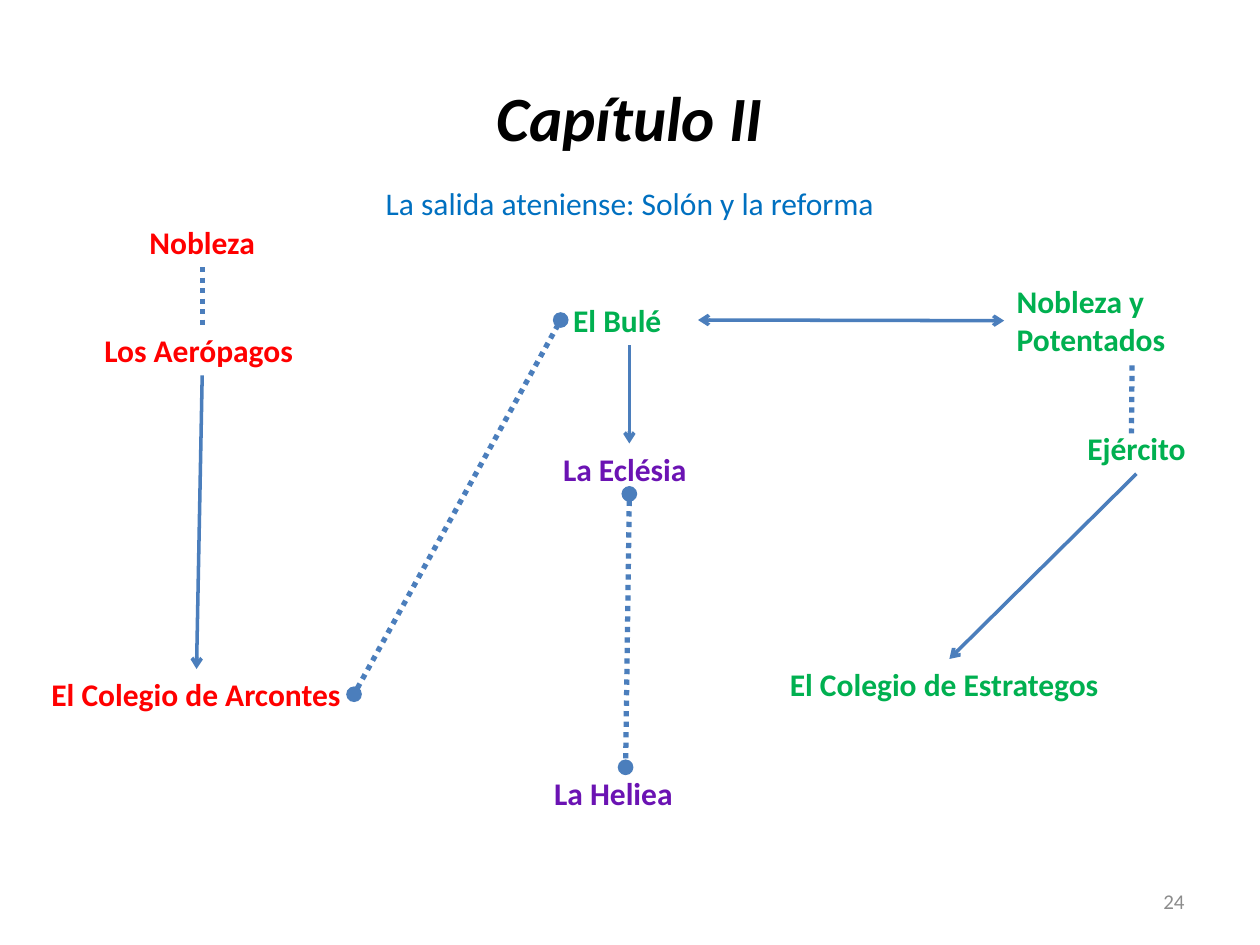
from lxml.etree import SubElement
from pptx import Presentation
from pptx.dml.color import RGBColor
from pptx.enum.dml import MSO_LINE
from pptx.enum.shapes import MSO_CONNECTOR
from pptx.enum.text import MSO_ANCHOR, PP_ALIGN
from pptx.oxml.ns import qn
from pptx.util import Inches, Pt

BLACK = RGBColor(0x00, 0x00, 0x00)
GRAY = RGBColor(0x8C, 0x8C, 0x8C)
BLUE = RGBColor(0x00, 0x70, 0xC0)
RED = RGBColor(0xFF, 0x00, 0x00)
GREEN = RGBColor(0x00, 0xB0, 0x50)
PURPLE = RGBColor(0x6B, 0x13, 0xB3)
LINE = RGBColor(0x4B, 0x7E, 0xBC)
TOP, LEFT, BOTTOM, RIGHT = range(4)


class Board:
    font = "Calibri"

    def __init__(self, deck):
        self.slide = deck.slides.add_slide(deck.slide_layouts[5])

    def style(self, shape, text, color, size, align, bold=False, italic=False):
        """Fill a shape with one formatted paragraph."""
        frame = shape.text_frame
        frame.word_wrap = True
        frame.text = text
        para = frame.paragraphs[0]
        para.alignment = align
        font = para.runs[0].font
        font.name, font.size = self.font, Pt(size)
        font.bold, font.italic = bold, italic
        font.color.rgb = color

    def title(self, text, x, y, w, h):
        shape = self.slide.shapes.title
        shape.left, shape.top = Inches(x), Inches(y)
        shape.width, shape.height = Inches(w), Inches(h)
        shape.text_frame.vertical_anchor = MSO_ANCHOR.MIDDLE
        self.style(shape, text, BLACK, 36, PP_ALIGN.CENTER, True, True)

    def label(self, text, x, y, w, color, h=0.4, size=18,
              align=PP_ALIGN.LEFT, bold=True):
        box = self.slide.shapes.add_textbox(
            Inches(x), Inches(y), Inches(w), Inches(h))
        self.style(box, text, color, size, align, bold)
        return box

    def link(self, start, side, goal, end, head=None, tail=None, dots=False):
        """Join two boxes; with no end side, goal is a free (x, y) point."""
        line = self.slide.shapes.add_connector(
            MSO_CONNECTOR.STRAIGHT, 0, 0, 0, 0)
        line.begin_connect(start, side)
        if end is None:
            line.end_x, line.end_y = (Inches(v) for v in goal)
        else:
            line.end_connect(goal, end)
        line.line.color.rgb = LINE
        line.line.width = Pt(3 if dots else 2)
        if dots:
            line.line.dash_style = MSO_LINE.ROUND_DOT
        props = line._element.spPr
        stroke = props.find(qn("a:ln"))
        for tag, kind in (("a:headEnd", head), ("a:tailEnd", tail)):
            if kind:
                SubElement(stroke, qn(tag)).set("type", kind)
        SubElement(props, qn("a:effectLst"))


def main():
    deck = Presentation()
    deck.slide_width, deck.slide_height = Inches(10), Inches(7.5)
    board = Board(deck)
    mid = PP_ALIGN.CENTER

    board.title("Capítulo II", 0, 0.3, 10, 1.25)
    board.label("La salida ateniense: Solón y la reforma", 0, 1.41, 10, BLUE,
                align=mid, bold=False)
    page = board.label("24", 7.17, 6.95, 2.33, GRAY, size=12,
                       align=PP_ALIGN.RIGHT, bold=False)
    page.text_frame.vertical_anchor = MSO_ANCHOR.MIDDLE

    noble = board.label("Nobleza", 0.94, 1.72, 1.33, RED, align=mid)
    elders = board.label("Los Aerópagos ", 0.55, 2.58, 2.11, RED, align=mid)
    archons = board.label("El Colegio de Arcontes", 0.31, 5.31, 2.5, RED)
    council = board.label("El Bulé", 4.45, 2.34, 1.09, GREEN)
    people = board.label("La Eclésia", 4.37, 3.52, 1.25, PURPLE)
    court = board.label("La Heliea", 4.3, 6.09, 1.33, PURPLE)
    rich = board.label("Nobleza y Potentados", 7.97, 2.19, 2.03, GREEN, h=0.71)
    army = board.label("Ejército", 8.28, 3.36, 1.48, GREEN, align=mid)
    chiefs = board.label("El Colegio de Estrategos", 6.17, 5.23, 2.73, GREEN)

    for start, goal in ((council, people), (elders, archons), (army, chiefs)):
        board.link(start, BOTTOM, goal, TOP, tail="arrow")
    board.link(rich, LEFT, council, RIGHT, "arrow", "arrow")
    board.link(noble, BOTTOM, elders, TOP, dots=True)
    board.link(rich, BOTTOM, (8.98, 3.44), None, dots=True)
    board.link(people, BOTTOM, court, TOP, "oval", "oval", True)
    board.link(archons, RIGHT, council, LEFT, "oval", "oval", True)

    deck.save("out.pptx")


if __name__ == "__main__":
    main()
